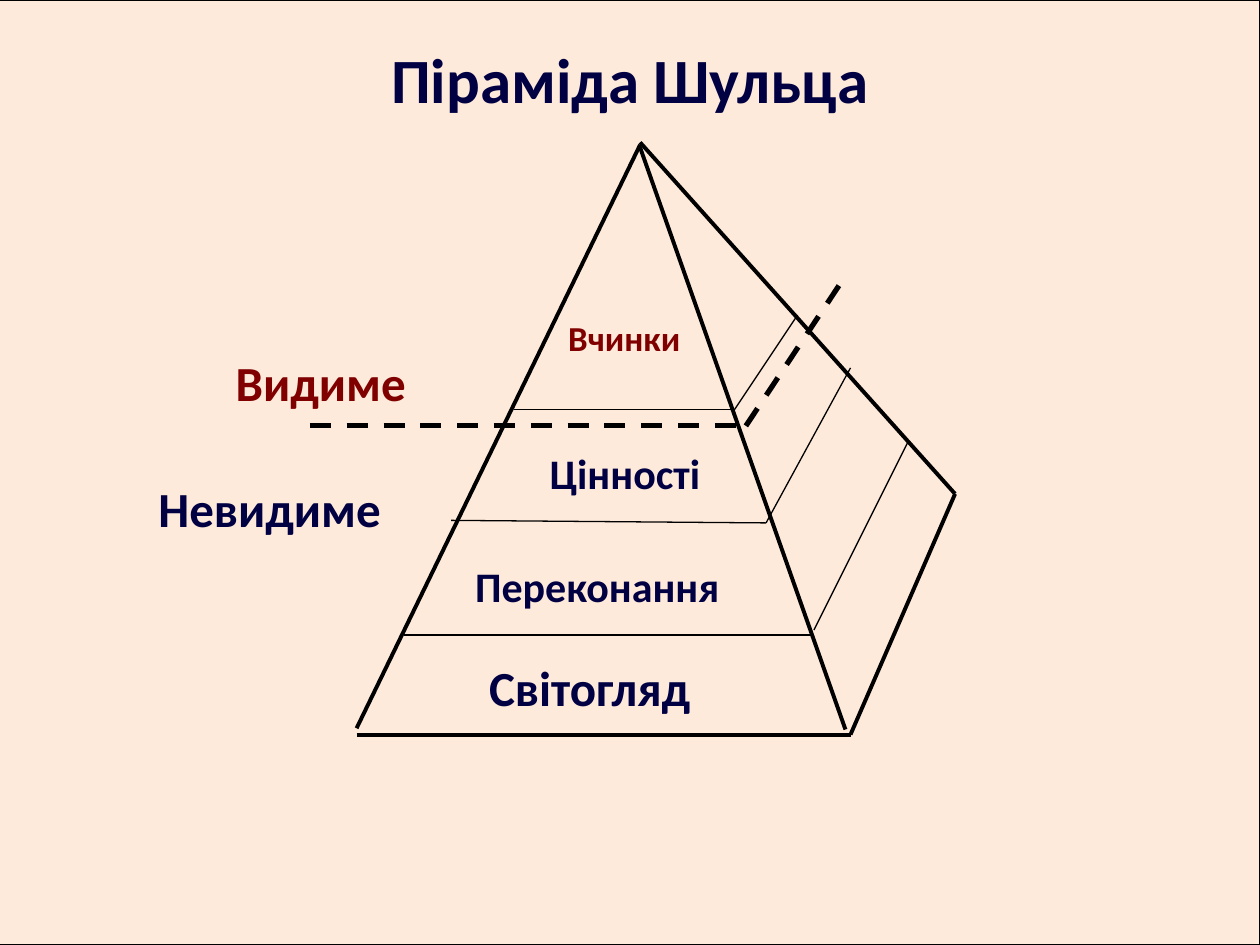
"""Build the Schultz pyramid slide."""
from lxml.etree import SubElement
from pptx import Presentation
from pptx.dml.color import RGBColor
from pptx.enum.dml import MSO_LINE
from pptx.enum.shapes import MSO_CONNECTOR, MSO_SHAPE
from pptx.enum.text import MSO_ANCHOR, PP_ALIGN
from pptx.oxml.ns import qn
from pptx.util import Inches, Pt

PEACH, BLACK, NAVY, MAROON = "FDEADA", "000000", "000042", "800000"
BACKDROP = (-0.31, 0, 10.31, 7.5)

TITLE = ("Піраміда Шульца", (0.5, 0, 9, 1.25), 36, NAVY)
LABELS = [
    ("Вчинки", (3.83, 2.46, 2.25, 0.44), 20, MAROON),
    ("Цінності", (3.96, 3.5, 2, 0.38), 24, NAVY),
    ("Переконання", (3.52, 4.4, 2.44, 0.5), 24, NAVY),
    ("Світогляд", (3.36, 5.17, 2.64, 0.5), 28, NAVY),
    ("Видиме", (1.67, 2.75, 1.75, 0.38), 28, MAROON),
    ("Невидиме", (0.86, 3.75, 2.56, 0.39), 28, NAVY),
]

EDGES = [
    ((5.08, 1.13), (7.58, 3.92)),
    ((5.08, 1.17), (6.71, 5.79)),
    ((5.08, 1.15), (2.83, 5.78)),
    ((2.83, 5.83), (6.75, 5.83)),
    ((6.75, 5.83), (7.58, 3.92)),
]
LAYERS = [
    ((4.08, 3.25), (5.83, 3.25)),
    ((5.83, 3.25), (6.33, 2.5)),
    ((3.58, 4.13), (6.08, 4.15)),
    ((6.08, 4.15), (6.75, 2.92)),
    ((3.21, 5.04), (6.46, 5.04)),
    ((6.46, 5), (7.21, 3.5)),
]
VISIBILITY = [
    ((2.46, 3.38), (5.96, 3.38)),
    ((5.92, 3.38), (6.67, 2.25)),
]
STROKES = [
    (LAYERS, {"width": Pt(0.75)}),
    (EDGES, {"width": Pt(2.25)}),
    (VISIBILITY, {"width": Pt(3), "dash_style": MSO_LINE.DASH}),
]


def rgb(value):
    return RGBColor.from_string(value)


def apply(target, formats):
    for name, value in formats.items():
        setattr(target, name, value)


def add_backdrop(slide):
    backdrop = slide.shapes.add_shape(MSO_SHAPE.RECTANGLE, *map(Inches, BACKDROP))
    backdrop.shadow.inherit = False
    backdrop.fill.solid()
    backdrop.fill.fore_color.rgb = rgb(PEACH)
    backdrop.line.color.rgb = rgb(BLACK)
    backdrop.line.width = Pt(0.75)


def add_stroke(slide, start, end, formats):
    stroke = slide.shapes.add_connector(
        MSO_CONNECTOR.STRAIGHT, *map(Inches, start + end))
    stroke.line.color.rgb = rgb(BLACK)
    apply(stroke.line, formats)
    SubElement(stroke._element.spPr, qn("a:effectLst"))


def add_label(slide, wording, place, size, color, anchor=MSO_ANCHOR.TOP):
    frame = slide.shapes.add_textbox(*map(Inches, place)).text_frame
    apply(frame, {"word_wrap": True, "vertical_anchor": anchor})
    paragraph = frame.paragraphs[0]
    paragraph.alignment = PP_ALIGN.CENTER
    run = paragraph.add_run()
    run.text = wording
    apply(run.font, {"name": "Calibri", "size": Pt(size), "bold": True})
    run.font.color.rgb = rgb(color)


def main():
    deck = Presentation()
    apply(deck, {"slide_width": Inches(10), "slide_height": Inches(7.5)})
    slide = deck.slides.add_slide(deck.slide_layouts[6])
    slide.background.fill.solid()
    slide.background.fill.fore_color.rgb = rgb(PEACH)
    add_backdrop(slide)
    for segments, formats in STROKES:
        for start, end in segments:
            add_stroke(slide, start, end, formats)
    for label in LABELS:
        add_label(slide, *label)
    add_label(slide, *TITLE, anchor=MSO_ANCHOR.MIDDLE)
    deck.save("out.pptx")


if __name__ == "__main__":
    main()
